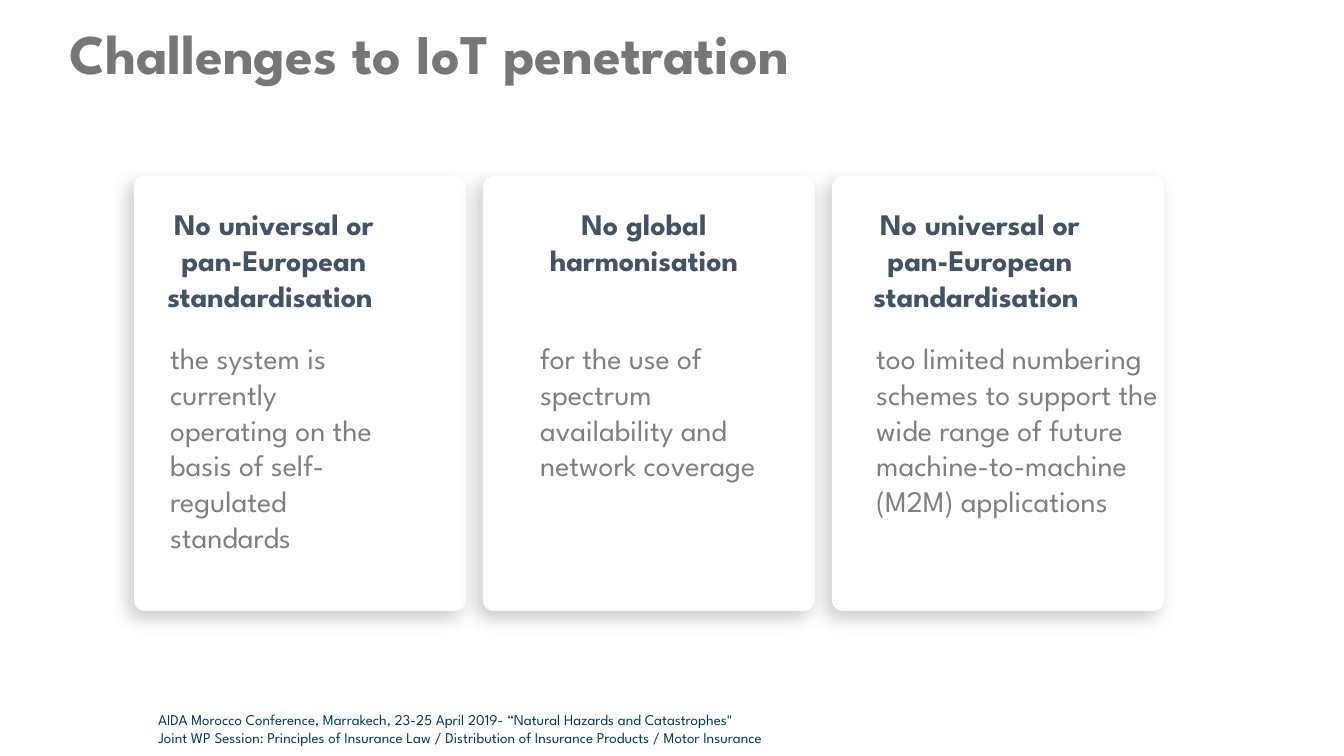
from lxml.etree import SubElement
from pptx import Presentation
from pptx.dml.color import RGBColor
from pptx.enum.shapes import MSO_SHAPE
from pptx.enum.text import MSO_AUTO_SIZE, PP_ALIGN
from pptx.oxml.ns import qn
from pptx.util import Pt

SCALE = 914400 / 134.4  # EMU per px
FONT = "League Spartan"
GREY, SLATE, NAVY, SOFT = "767676", "425366", "003B55", "7F7F7F"


def emu(*sizes):
    return [round(size * SCALE) for size in sizes]


def color(code):
    return RGBColor.from_string(code)


def write(frame, lines, size=16, ink=SOFT, bold=False, align=PP_ALIGN.LEFT, lead=None):
    for i, line in enumerate(lines):
        para = frame.add_paragraph() if i else frame.paragraphs[0]
        para.alignment = align
        if lead:
            para.line_spacing = lead
        run = para.add_run()
        run.text = line
        font = run.font
        font.name, font.size, font.bold = FONT, Pt(size), bold
        font.color.rgb = color(ink)


class Page:
    def __init__(self, deck):
        self.slide = deck.slides.add_slide(deck.slide_layouts[6])

    def text(self, box, lines, wrap=True, grow=True, **style):
        frame = self.slide.shapes.add_textbox(*emu(*box)).text_frame
        frame.word_wrap = wrap
        frame.auto_size = MSO_AUTO_SIZE.SHAPE_TO_FIT_TEXT if grow else MSO_AUTO_SIZE.NONE
        write(frame, lines, **style)

    def card(self, box):
        card = self.slide.shapes.add_shape(MSO_SHAPE.ROUNDED_RECTANGLE, *emu(*box))
        card.adjustments[0] = 0.033
        card.fill.solid()
        card.fill.fore_color.rgb = color("FFFFFF")
        card.line.fill.background()
        card.shadow.inherit = False
        # Soft shadow falling to the lower left
        effects = card._element.spPr.find(qn("a:effectLst"))
        shade = SubElement(effects, qn("a:outerShdw"), blurRad=str(Pt(10)),
                           dist=str(Pt(5)), dir=str(135 * 60000),
                           algn="tr", rotWithShape="0")
        tint = SubElement(shade, qn("a:srgbClr"), val="000000")
        SubElement(tint, qn("a:alpha"), val="20000")


def main():
    deck = Presentation()
    deck.slide_width, deck.slide_height = emu(1344, 756)
    page = Page(deck)

    # Footer and title
    page.text((145, 704, 1142, 50), [
        "AIDA Morocco Conference, Marrakech, 23-25 April 2019- “Natural Hazards and Catastrophes\"",
        "Joint WP Session: Principles of Insurance Law / Distribution of Insurance Products / Motor Insurance",
    ], size=8, ink=NAVY)
    page.text((56, 20, 1142, 122), ["Challenges to IoT penetration"],
              grow=False, size=30, ink=GREY, bold=True, lead=0.9)

    # Cards
    for i in range(3):
        page.card((134 + 349 * i, 176, 332, 435))

    # Card headings and bodies: left, width and height of each box
    norm = ["No universal or", " pan-European ", "standardisation "]
    parts = [
        (norm, (145, 258, 121), (157, 246, 228),
         "the system is currently operating on the basis of self-regulated standards"),
        (["No global", " harmonisation "], (519, 250, 86), (527, 246, 194),
         "for the use of spectrum availability and network coverage"),
        (norm, (851, 258, 121), (863, 313, 337),
         "too limited numbering schemes to support the wide range of future "
         "machine-to-machine (M2M) applications"),
    ]
    for head, (x, w, h), (left, wide, high), body in parts:
        page.text((x, 199, w, h), head, wrap=False, ink=SLATE, bold=True,
                  align=PP_ALIGN.CENTER)
        page.text((left, 333, wide, high), [body])

    deck.save("out.pptx")


if __name__ == "__main__":
    main()
